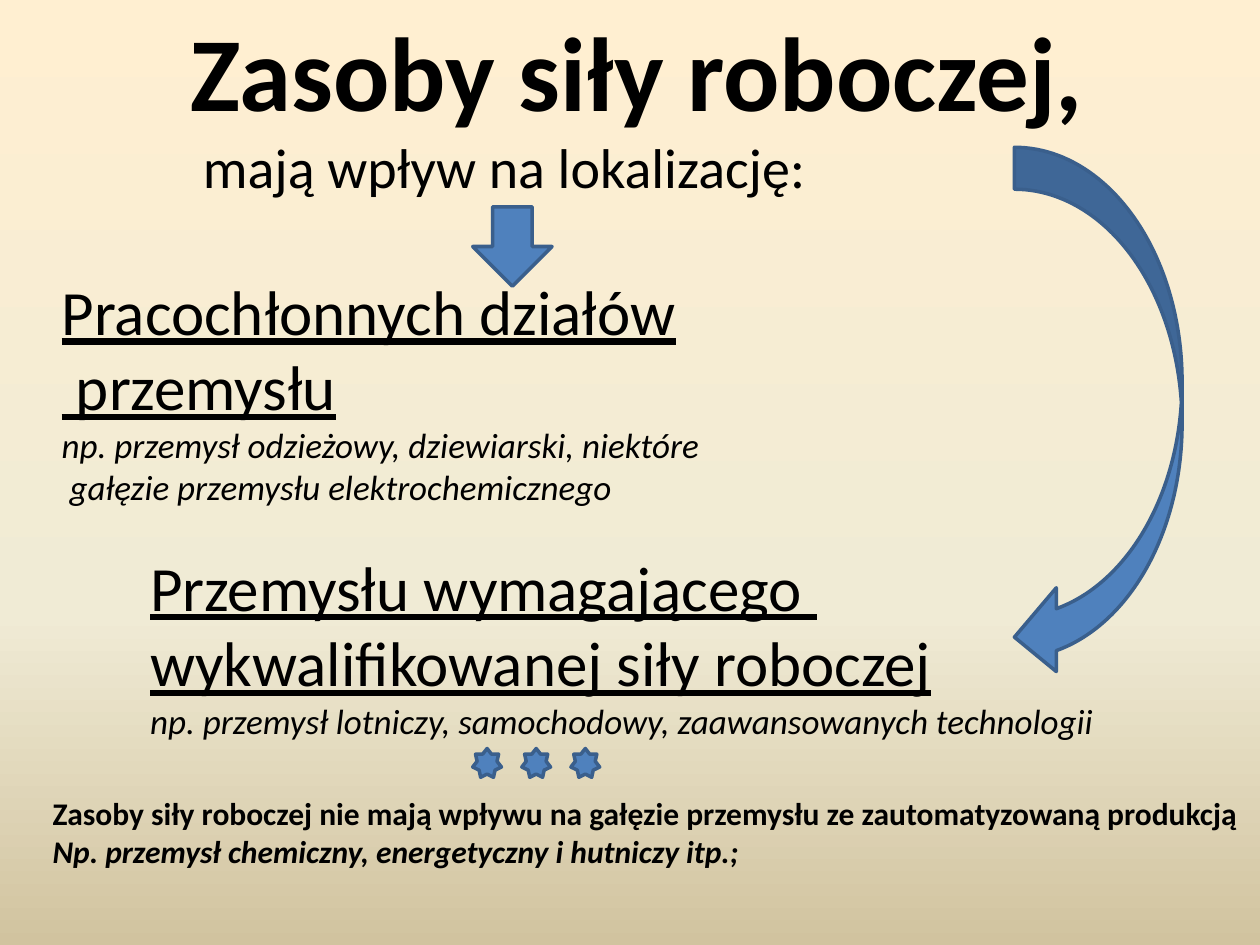
from copy import deepcopy

from pptx import Presentation
from pptx import util as u
from pptx.dml.color import RGBColor
from pptx.enum import shapes, text
from pptx.oxml import ns

COLORS = {
    "text": "000000",
    "fill": "4F81BD",
    "line": "3A5F8C",
    "sky": "FFEFD1",
    "sand": "F0EBD5",
    "earth": "D1C39F",
}
HEADING = {"size": u.Pt(36), "bold": False, "underline": True}
EXAMPLE = {"size": u.Pt(20), "bold": False, "italic": True}
SUMMARY = {"size": u.Pt(18), "bold": True}


def color(name):
    return RGBColor.from_string(COLORS[name])


def place(shape, box):
    for name, value in zip(("left", "top", "width", "height"), box):
        setattr(shape, name, u.Cm(value))


def paint_background(slide, stops):
    fill = slide.background.fill
    fill.gradient()
    fill.gradient_angle = 270
    stop_list = slide.element.find(".//" + ns.qn("a:gsLst"))
    stop_list.append(deepcopy(stop_list[-1]))
    for stop, (position, name) in zip(fill.gradient_stops, stops):
        stop.position = position
        stop.color.rgb = color(name)


def write_text(shape, box, lines, wrap=False):
    place(shape, box)
    frame = shape.text_frame
    frame_format = {
        "word_wrap": wrap,
        "auto_size": text.MSO_AUTO_SIZE.NONE,
        "vertical_anchor": text.MSO_ANCHOR.TOP,
    }
    for name, value in frame_format.items():
        setattr(frame, name, value)
    for index, (content, font_format) in enumerate(lines):
        paragraph = frame.add_paragraph() if index else frame.paragraphs[0]
        paragraph.alignment = text.PP_ALIGN.LEFT
        paragraph.space_before = u.Pt(0)
        properties = paragraph._p.get_or_add_pPr()
        properties.set("marL", "0")
        properties.set("indent", "0")
        properties.append(properties.makeelement(ns.qn("a:buNone"), {}))
        run = paragraph.add_run()
        run.text = content
        run.font.color.rgb = color("text")
        for name, value in {"name": "Calibri", **font_format}.items():
            setattr(run.font, name, value)


def add_symbol(slide, kind, box):
    shape = slide.shapes.add_shape(kind, *map(u.Cm, box))
    shape.shadow.inherit = False
    shape.fill.solid()
    shape.fill.fore_color.rgb = color("fill")
    shape.line.color.rgb = color("line")
    shape.line.width = u.Pt(2)


def main():
    presentation = Presentation()
    presentation.slide_width = u.Cm(25.4)
    presentation.slide_height = u.Cm(19.05)
    slide = presentation.slides.add_slide(presentation.slide_layouts[3])
    paint_background(slide, [(0, "sky"), (0.65, "sand"), (1, "earth")])

    title, labour, skilled = slide.placeholders
    write_text(title, (3.58, 0, 18.72, 6.76), [
        ("Zasoby siły roboczej,", {"size": u.Pt(60), "bold": True}),
        (" mają wpływ na lokalizację:", {"size": u.Pt(32), "bold": False}),
    ], wrap=True)
    write_text(labour, (0.99, 5.36, 13.46, 5.05), [
        ("Pracochłonnych działów", HEADING),
        (" przemysłu", HEADING),
        ("np. przemysł odzieżowy, dziewiarski, niektóre", EXAMPLE),
        (" gałęzie przemysłu elektrochemicznego", EXAMPLE),
    ])
    write_text(skilled, (2.77, 10.92, 19.66, 4.19), [
        ("Przemysłu wymagającego ", HEADING),
        ("wykwalifikowanej siły roboczej", HEADING),
        ("np. przemysł lotniczy, samochodowy, zaawansowanych technologii", EXAMPLE),
    ])

    add_symbol(slide, shapes.MSO_SHAPE.DOWN_ARROW, (9.53, 4.17, 1.6, 1.6))
    add_symbol(slide, shapes.MSO_SHAPE.CURVED_LEFT_ARROW, (20.45, 2.97, 3.38, 10.72))

    summary = slide.shapes.add_textbox(0, 0, 0, 0)
    write_text(summary, (0.81, 15.88, 24.59, 1.8), [
        ("Zasoby siły roboczej nie mają wpływu na gałęzie przemysłu "
         "ze zautomatyzowaną produkcją", SUMMARY),
        ("Np. przemysł chemiczny, energetyczny i hutniczy itp.;",
         {**SUMMARY, "italic": True}),
    ])
    for index in range(3):
        add_symbol(slide, shapes.MSO_SHAPE.STAR_7_POINT,
                   (9.53 + index * 0.99, 15.09, 0.58, 0.58))

    presentation.save("out.pptx")


if __name__ == "__main__":
    main()
